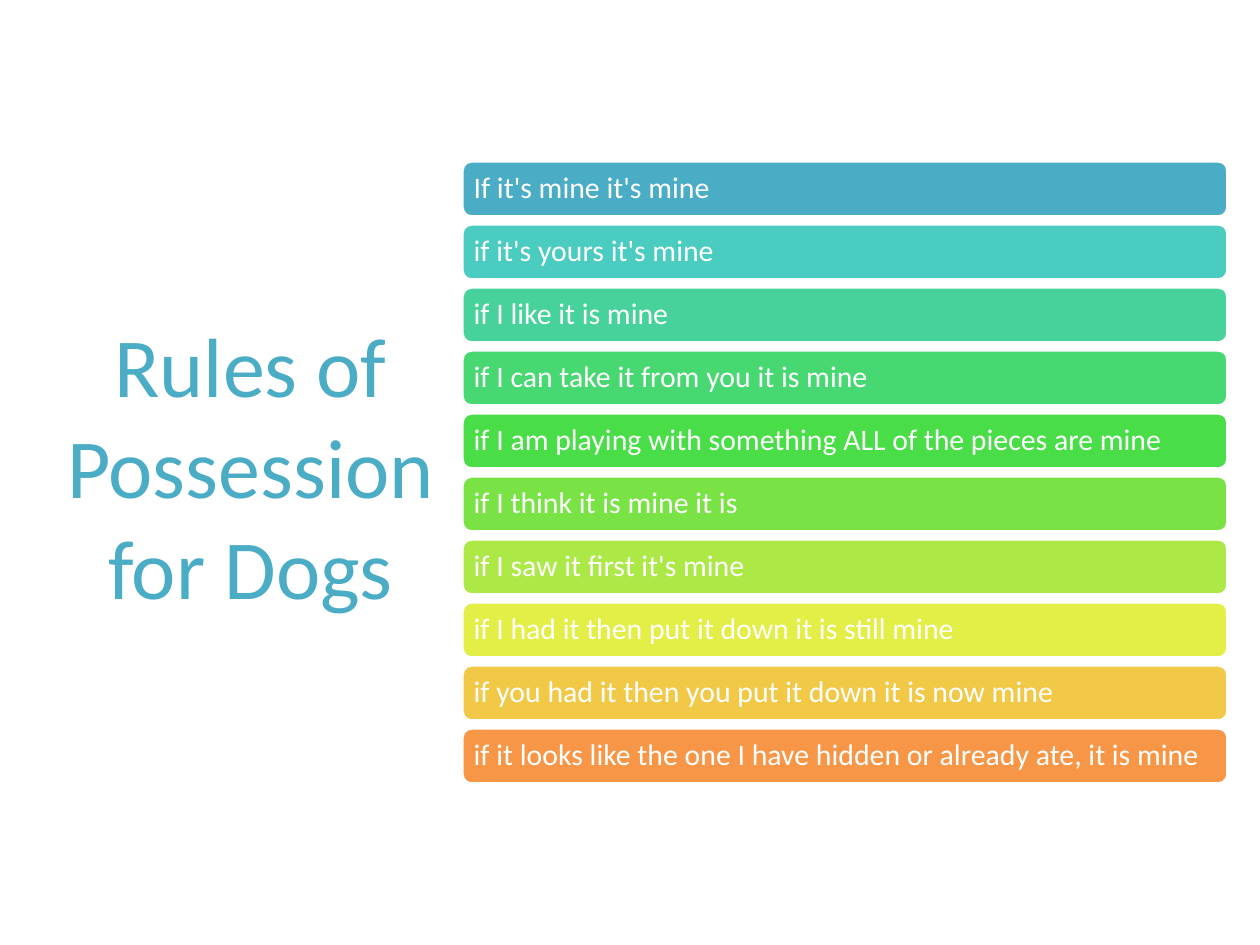
from pptx import Presentation
from pptx.dml.color import RGBColor
from pptx.enum.shapes import MSO_SHAPE
from pptx.enum.text import MSO_ANCHOR, MSO_AUTO_SIZE, PP_ALIGN
from pptx.util import Pt

PX = 914400 // 126  # one px in EMU
COLORS = {"title": "4BACC6", "white": "FFFFFF"}

# Rules from top to bottom, each with its bar colour
RULES = [
    ("If it's mine it's mine", "4BACC6"),
    ("if it's yours it's mine", "4ACCC0"),
    ("if I like it is mine", "48D29B"),
    ("if I can take it from you it is mine", "47D872"),
    ("if I am playing with something ALL of the pieces are mine", "49DE47"),
    ("if I think it is mine it is", "79E346"),
    ("if I saw it first it's mine", "ACE946"),
    ("if I had it then put it down it is still mine", "E3EE46"),
    ("if you had it then you put it down it is now mine", "F2C946"),
    ("if it looks like the one I have hidden or already ate, it is mine", "F79646"),
]


def set_text(s, text, size, color, align=PP_ALIGN.LEFT, spacing=1.0, inset=None):
    tf = s.text_frame
    tf.word_wrap = True
    tf.auto_size = MSO_AUTO_SIZE.NONE
    tf.vertical_anchor = MSO_ANCHOR.MIDDLE
    if inset is not None:
        tf.margin_left = tf.margin_right = inset * PX
        tf.margin_top = tf.margin_bottom = inset * PX
    p = tf.paragraphs[0]
    p.alignment = align
    p.line_spacing = spacing
    r = p.add_run()
    r.text = text
    r.font.name = "Calibri"
    r.font.size = Pt(size)
    r.font.color.rgb = RGBColor.from_string(color)


prs = Presentation()
prs.slide_width, prs.slide_height = 1260 * PX, 945 * PX
slide = prs.slides.add_slide(prs.slide_layouts[5])

# Title on the left
title = slide.shapes.title
title.left, title.top, title.width, title.height = [v * PX for v in (54, 86, 393, 758)]
set_text(title, "Rules of Possession for Dogs", 48, COLORS["title"], align=PP_ALIGN.CENTER)

# Stack of rule bars
LEFT, TOP, WIDTH, HEIGHT, PITCH = 462, 161, 766, 56, 63
for i, (rule, fill) in enumerate(RULES):
    s = slide.shapes.add_shape(MSO_SHAPE.ROUNDED_RECTANGLE, LEFT * PX,
                               (TOP + i * PITCH) * PX, WIDTH * PX, HEIGHT * PX)
    s.shadow.inherit = False
    s.fill.solid()
    s.fill.fore_color.rgb = RGBColor.from_string(fill)
    s.line.color.rgb = RGBColor.from_string(COLORS["white"])
    s.line.width = Pt(2)
    set_text(s, rule, 17, COLORS["white"], spacing=0.9, inset=9)

prs.save("out.pptx")
